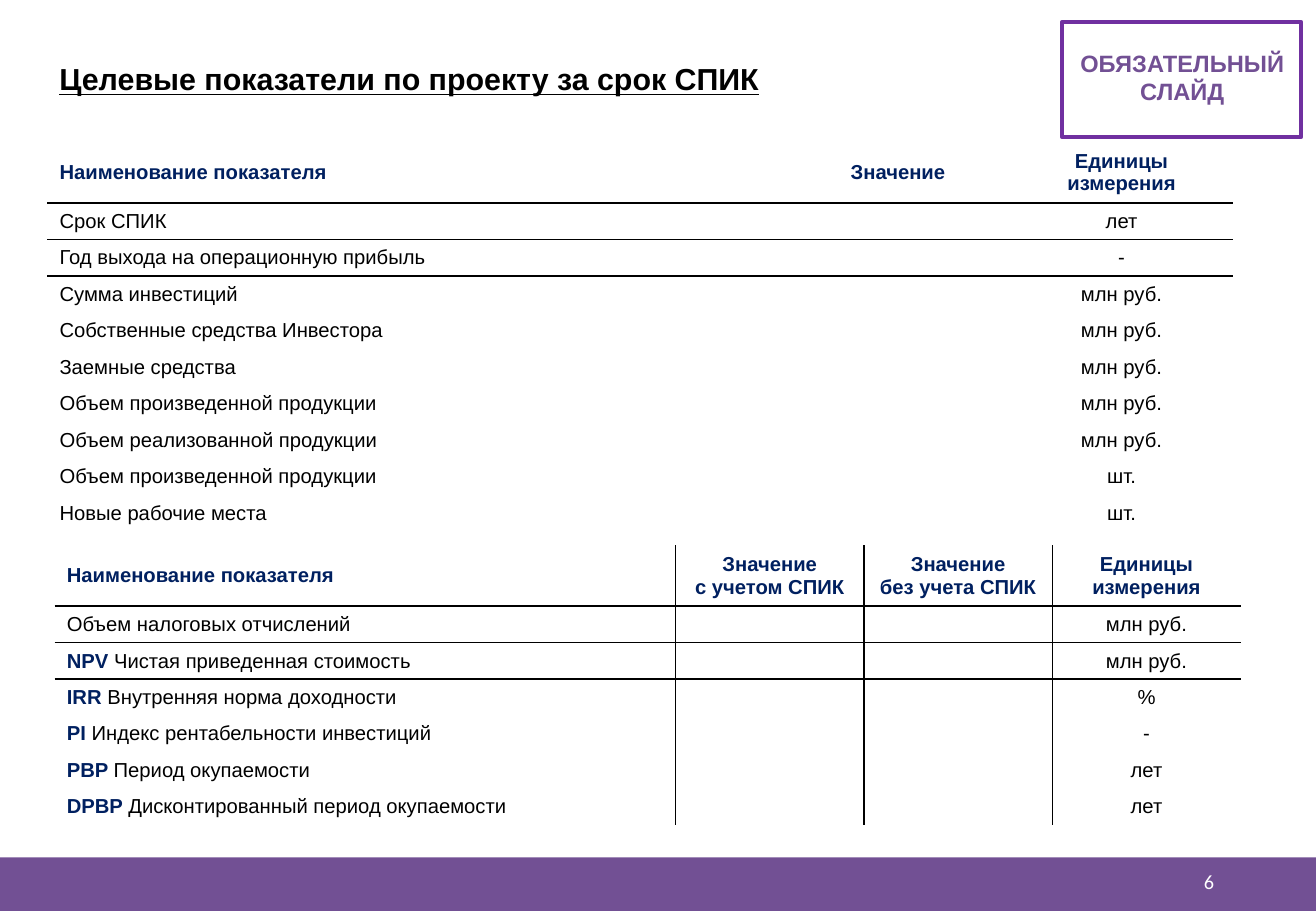
from lxml.etree import SubElement
from pptx import Presentation
from pptx.dml.color import RGBColor
from pptx.enum.shapes import MSO_SHAPE
from pptx.enum.text import MSO_ANCHOR, PP_ALIGN
from pptx.oxml.ns import qn
from pptx.util import Inches, Pt

BLACK, WHITE, NAVY, PURPLE, VIOLET = "000000", "FFFFFF", "002060", "725094", "7030A0"
PLAIN_TABLE_STYLE = "{2D5ABB26-0587-4C30-8999-92F81FD0307C}"
HEADER_HEIGHT, ROW_HEIGHT = 0.5, 0.3

TARGET_ROWS = [
    ("Наименование показателя", "Значение", "Единицы измерения"),
    ("Срок СПИК", "", "лет"),
    ("Год выхода на операционную прибыль", "", "-"),
    ("Сумма инвестиций", "", "млн руб."),
    ("Собственные средства Инвестора", "", "млн руб."),
    ("Заемные средства", "", "млн руб."),
    ("Объем произведенной продукции", "", "млн руб."),
    ("Объем реализованной продукции", "", "млн руб."),
    ("Объем произведенной продукции", "", "шт."),
    ("Новые рабочие места", "", "шт."),
]
EFFECT_ROWS = [
    ("Наименование показателя", "Значение\nс учетом СПИК", "Значение\nбез учета СПИК",
     "Единицы измерения"),
    ("Объем налоговых отчислений", "", "", "млн руб."),
    ("NPV |Чистая приведенная стоимость", "", "", "млн руб."),
    ("IRR |Внутренняя норма доходности", "", "", "%"),
    ("PI |Индекс рентабельности инвестиций", "", "", "-"),
    ("PBP |Период окупаемости", "", "", "лет"),
    ("DPBP |Дисконтированный период окупаемости", "", "", "лет"),
]


def rgb(color):
    return RGBColor.from_string(color)


def write_text(frame, text, size=12, color=BLACK, bold=False, underline=False,
               font="Arial", align=PP_ALIGN.LEFT):
    """Write one paragraph a line; a part before "|" is a bold navy abbreviation."""
    for index, line in enumerate(text.split("\n")):
        paragraph = frame.add_paragraph() if index else frame.paragraphs[0]
        paragraph.alignment = align
        if not line:
            paragraph._p.get_or_add_endParaRPr().set("sz", str(size * 100))
            continue
        abbreviation, _, rest = line.rpartition("|")
        for part, part_color, part_bold in ((abbreviation, NAVY, True), (rest, color, bold)):
            if part:
                run = paragraph.add_run()
                run.text = part
                run.font.name = font
                run.font.size = Pt(size)
                run.font.bold = part_bold
                run.font.underline = underline
                run.font.color.rgb = rgb(part_color)


def add_text(slide, box, text, anchor=MSO_ANCHOR.TOP, wrap=True, **text_format):
    shape = slide.shapes.add_textbox(*map(Inches, box))
    shape.text_frame.word_wrap = wrap
    shape.text_frame.vertical_anchor = anchor
    write_text(shape.text_frame, text, **text_format)


def add_rectangle(slide, box, fill=None, line=None):
    shape = slide.shapes.add_shape(MSO_SHAPE.RECTANGLE, *map(Inches, box))
    shape.shadow.inherit = False
    if fill:
        shape.fill.solid()
        shape.fill.fore_color.rgb = rgb(fill)
    else:
        shape.fill.background()
    if line:
        shape.line.color.rgb = rgb(line)
        shape.line.width = Pt(2.25)
    else:
        shape.line.fill.background()


def set_borders(cell, sides):
    """Draw thin black borders; sides is a string of letters in the order LRTB."""
    properties = cell._tc.get_or_add_tcPr()
    for side in sides:
        line = SubElement(properties, qn(f"a:ln{side}"), w=str(Pt(1)))
        fill = SubElement(line, qn("a:solidFill"))
        SubElement(fill, qn("a:srgbClr"), val=BLACK)


def add_indicator_table(slide, left, top, widths, rows, dividers=False):
    height = HEADER_HEIGHT + ROW_HEIGHT * (len(rows) - 1)
    box = (left, top, sum(widths), height)
    table = slide.shapes.add_table(len(rows), len(widths), *map(Inches, box)).table
    table.first_row = table.horz_banding = False
    table._tbl.tblPr.find(qn("a:tableStyleId")).text = PLAIN_TABLE_STYLE
    for column, width in zip(table.columns, widths):
        column.width = Inches(width)
    for row_index, texts in enumerate(rows):
        header = row_index == 0
        table.rows[row_index].height = Inches(HEADER_HEIGHT if header else ROW_HEIGHT)
        for column_index, text in enumerate(texts):
            cell = table.cell(row_index, column_index)
            cell.vertical_anchor = MSO_ANCHOR.MIDDLE
            write_text(cell.text_frame, text, bold=header,
                       color=NAVY if header else BLACK,
                       align=PP_ALIGN.CENTER if column_index else PP_ALIGN.LEFT)
            sides = ""
            if dividers:
                sides += "L" if column_index else ""
                sides += "R" if column_index < len(widths) - 1 else ""
            sides += "T" if row_index in (1, 2) else ""
            sides += "B" if row_index in (0, 1) else ""
            set_borders(cell, sides)
            cell.fill.background()


def add_footer(slide, left, top, width, height):
    add_rectangle(slide, (left, top, width, height), fill=PURPLE)
    add_text(slide, (left + 7.65, top, 2.44, 0.4), "6", anchor=MSO_ANCHOR.MIDDLE,
             font="Calibri", color=WHITE, align=PP_ALIGN.RIGHT)


def add_badge(slide, left, top, width, height):
    add_rectangle(slide, (left, top, width, height), line=VIOLET)
    add_text(slide, (left + 0.04, top + 0.17, width - 0.07, 0.57), "ОБЯЗАТЕЛЬНЫЙ\nСЛАЙД",
             wrap=False, size=14, color=PURPLE, bold=True, align=PP_ALIGN.CENTER)


def main():
    presentation = Presentation()
    presentation.slide_width = Inches(10.83)
    presentation.slide_height = Inches(7.5)
    slide = presentation.slides.add_slide(presentation.slide_layouts[6])
    add_footer(slide, 0, 7.06, 10.83, 0.44)
    add_text(slide, (0.39, 0.45, 7.47, 0.4), "Целевые показатели по проекту за срок СПИК",
             size=18, bold=True, underline=True)
    add_indicator_table(slide, 0.39, 1.17, (6.08, 1.84, 1.84), TARGET_ROWS)
    add_indicator_table(slide, 0.45, 4.49, (5.11, 1.55, 1.55, 1.55), EFFECT_ROWS,
                        dividers=True)
    add_badge(slide, 8.74, 0.18, 1.97, 0.95)
    presentation.save("out.pptx")


if __name__ == "__main__":
    main()
